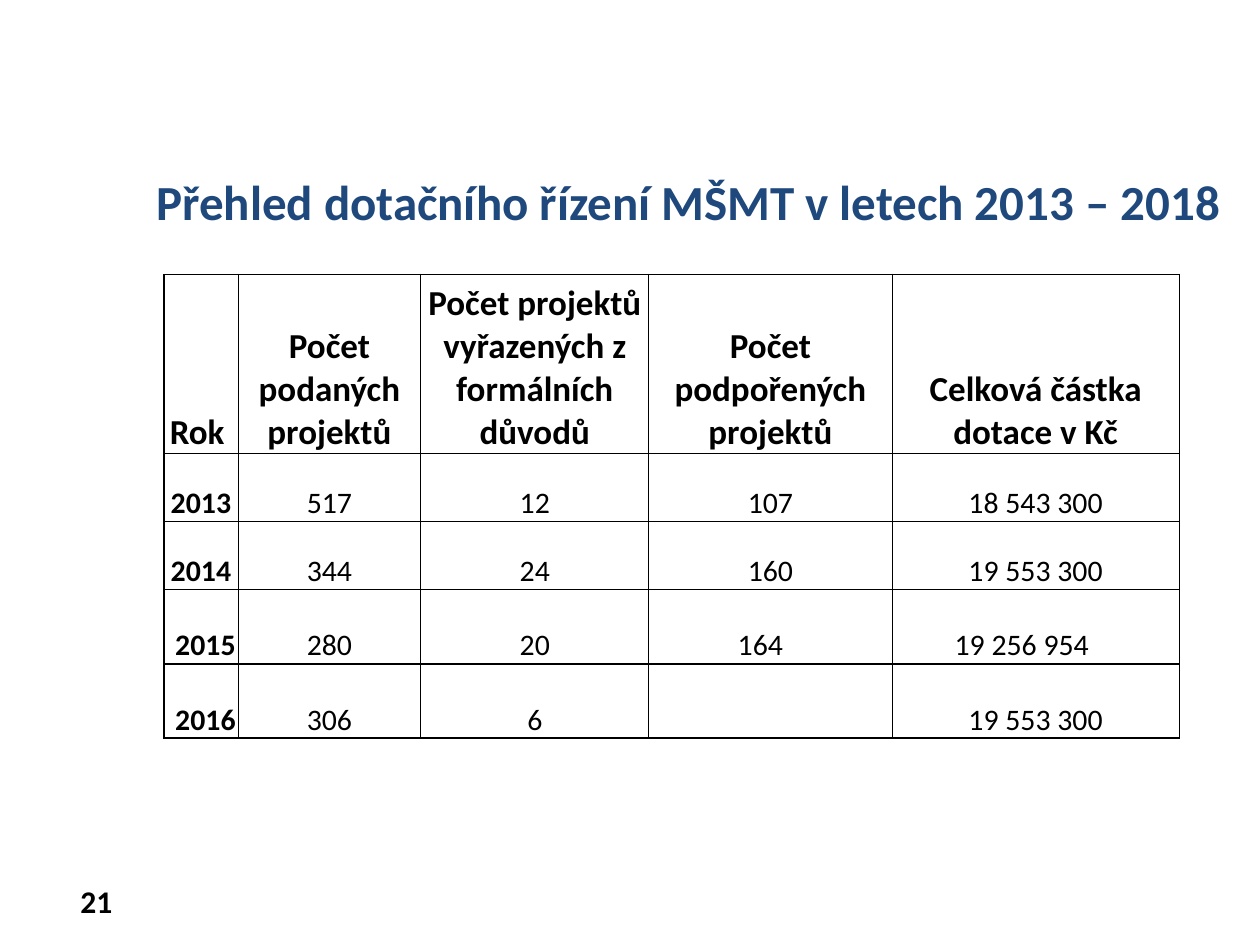
from lxml import etree
from pptx import Presentation
from pptx.dml.color import RGBColor
from pptx.enum.text import MSO_ANCHOR, MSO_AUTO_SIZE, PP_ALIGN
from pptx.oxml.ns import qn
from pptx.util import Inches, Pt

CENTER, LEFT, RIGHT = PP_ALIGN.CENTER, PP_ALIGN.LEFT, PP_ALIGN.RIGHT
TOP, BOTTOM = MSO_ANCHOR.TOP, MSO_ANCHOR.BOTTOM
FONT, BLACK, NAVY = "Calibri", "000000", "1F497D"
THIN, THICK = 0.5, 1
TITLE_ONLY = 5

TITLE = "Přehled dotačního řízení MŠMT v letech 2013 – 2018"
PAGE_NUMBER = "21"
HEADINGS = ["Rok", "Počet podaných projektů",
            "Počet projektů vyřazených z formálních důvodů",
            "Počet podpořených projektů", "Celková částka dotace v Kč"]
YEARS = [
    ["2013", "517", "12", "107", "18 543 300"],
    ["2014", "344", "24", "160", "19 553 300"],
    ["2015", "280", "20", "164", "19 256 954"],
    ["2016", "306", "6", "", "19 553 300"],
]
COLUMN_WIDTHS = [0.59, 1.45, 1.81, 1.93, 2.28]
ROW_HEIGHTS = [1.42, 0.54, 0.54, 0.59, 0.59, 0.33, 0.33]
# Line weights above each row, ending with the line below the last year
ROW_LINES = [THICK, THICK, THIN, THIN, THICK, THICK]
# Right insets of the cells whose text sits left of the column centre
RIGHT_INSETS = {(0, 0): 0.08, (3, 3): 0.18, (3, 4): 0.24}
CELL_INSET = 0.02


def color(hex_value):
    return RGBColor.from_string(hex_value)


def write(frame, text, size, bold=True, hex_value=BLACK, align=CENTER):
    """Put one formatted paragraph into a text frame."""
    paragraph = frame.paragraphs[0]
    paragraph.text = text
    paragraph.alignment = align
    font_format = {"name": FONT, "size": Pt(size), "bold": bold}
    for attribute, value in font_format.items():
        setattr(paragraph.font, attribute, value)
    paragraph.font.color.rgb = color(hex_value)


def set_borders(cell, weights):
    """Draw left, right, top and bottom lines; a zero weight hides one."""
    properties = cell._tc.get_or_add_tcPr()
    for position, (side, weight) in enumerate(zip("LRTB", weights)):
        line = etree.Element(qn(f"a:ln{side}"), w=str(Pt(weight)))
        if weight:
            fill = etree.SubElement(line, qn("a:solidFill"))
            etree.SubElement(fill, qn("a:srgbClr"), val=BLACK)
        else:
            etree.SubElement(line, qn("a:noFill"))
        properties.insert(position, line)


def border_weights(row, column):
    last_line = len(ROW_LINES) - 1
    if row >= last_line:
        return 0, 0, THICK if row == last_line else 0, 0
    left = THICK if column == 0 else THIN
    right = THICK if column == len(COLUMN_WIDTHS) - 1 else THIN
    return left, right, ROW_LINES[row], ROW_LINES[row + 1]


def format_cell(cell, row, column):
    cell.fill.background()
    cell_format = {
        "vertical_anchor": BOTTOM,
        "margin_left": Inches(CELL_INSET),
        "margin_top": Inches(CELL_INSET),
        "margin_right": Inches(RIGHT_INSETS.get((row, column), CELL_INSET)),
        "margin_bottom": 0,
    }
    for attribute, value in cell_format.items():
        setattr(cell, attribute, value)
    set_borders(cell, border_weights(row, column))


def add_title(slide):
    title = slide.shapes.title
    place = {"left": 1.14, "top": 1.31, "width": 8.86, "height": 6.19}
    for attribute, value in place.items():
        setattr(title, attribute, Inches(value))
    frame = title.text_frame
    frame.auto_size = MSO_AUTO_SIZE.NONE
    frame.vertical_anchor = TOP
    write(frame, TITLE, 28, hex_value=NAVY, align=LEFT)


def add_grant_table(slide):
    rows = [HEADINGS] + YEARS
    grants = slide.shapes.add_table(
        len(ROW_HEIGHTS), len(COLUMN_WIDTHS), Inches(1.3), Inches(2.18),
        Inches(sum(COLUMN_WIDTHS)), Inches(sum(ROW_HEIGHTS))).table
    grants.first_row = grants.horz_banding = False
    for column, width in zip(grants.columns, COLUMN_WIDTHS):
        column.width = Inches(width)
    for row, height in enumerate(ROW_HEIGHTS):
        grants.rows[row].height = Inches(height)
        texts = rows[row] if row < len(rows) else [""] * len(HEADINGS)
        for column, text in enumerate(texts):
            cell = grants.cell(row, column)
            format_cell(cell, row, column)
            # The two latest years are set flush right
            align = RIGHT if column == 0 and row >= 3 else CENTER
            write(cell.text_frame, text, 20 if row == 0 else 17,
                  bold=row == 0 or column == 0, align=align)
    # The unruled closing row spans the first four columns
    last_row = len(ROW_HEIGHTS) - 1
    grants.cell(last_row, 0).merge(grants.cell(last_row, 3))


def add_page_number(slide):
    number = slide.shapes.add_textbox(
        Inches(0.28), Inches(6.95), Inches(0.71), Inches(0.4))
    number.text_frame.word_wrap = True
    write(number.text_frame, PAGE_NUMBER, 18, align=RIGHT)


def main():
    presentation = Presentation()
    presentation.slide_width = Inches(10)
    presentation.slide_height = Inches(7.5)
    slide = presentation.slides.add_slide(
        presentation.slide_layouts[TITLE_ONLY])
    add_page_number(slide)
    add_title(slide)
    add_grant_table(slide)
    presentation.save("out.pptx")


if __name__ == "__main__":
    main()
